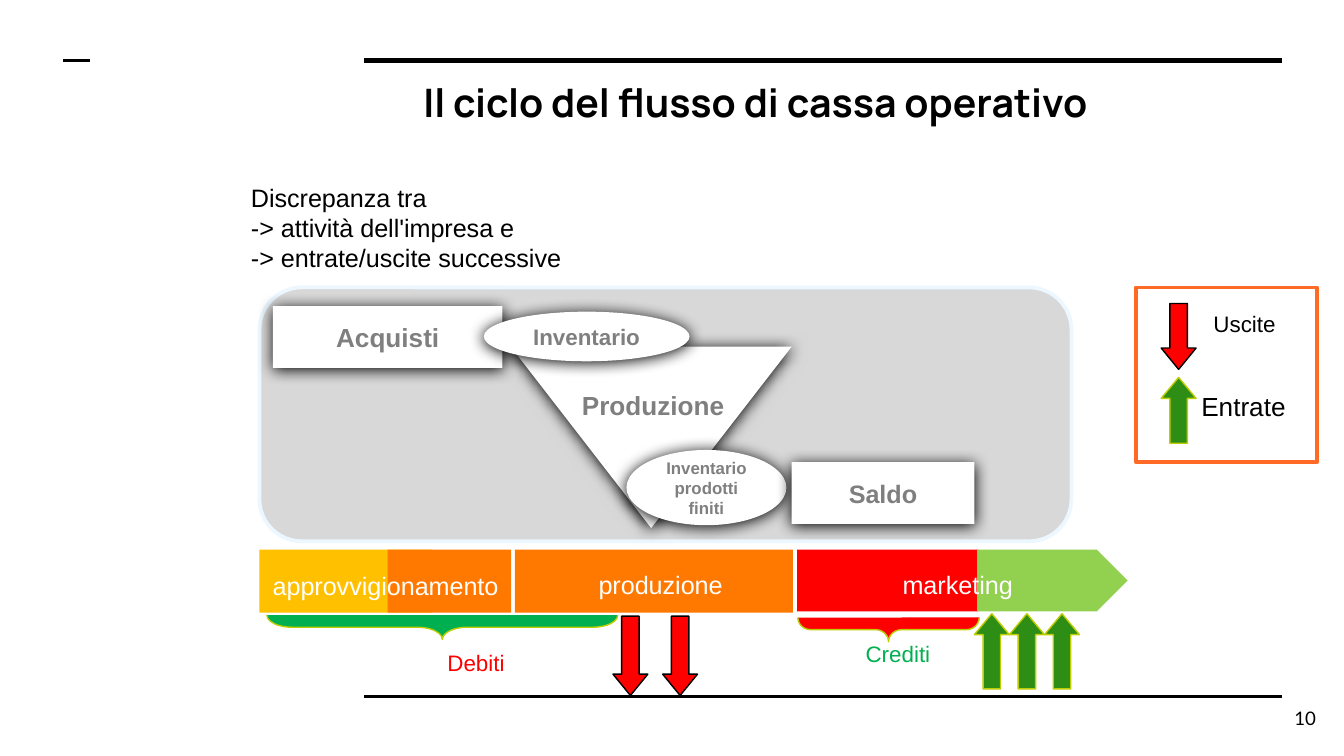
from lxml import etree
from pptx import Presentation
from pptx.dml.color import RGBColor
from pptx.enum.shapes import MSO_CONNECTOR, MSO_SHAPE as SHAPE
from pptx.enum.text import MSO_ANCHOR as ANCHOR, PP_ALIGN as ALIGN
from pptx.oxml import parse_xml
from pptx.oxml.ns import qn
from pptx.util import Pt

COLORS = {
    "black": "000000", "white": "FFFFFF", "grey": "7F7F7F", "panel": "D8D8D8",
    "pale_blue": "ECF7FF", "amber": "FFC000", "orange": "FF7900", "red": "FF0000",
    "light_green": "92D050", "green": "00B050", "dark_green": "2E8D15",
    "lime": "BECD00", "frame": "FF6B26",
}
SHADOW = (
    '<a:effectLst xmlns:a="http://schemas.openxmlformats.org/drawingml/2006/main">'
    '<a:outerShdw blurRad="107950" dist="12700" dir="5400000" algn="ctr" rotWithShape="0">'
    '<a:srgbClr val="000000"/></a:outerShdw></a:effectLst>'
)


def rgb(name):
    return RGBColor.from_string(COLORS[name])


def write(shape, text, size=13.5, color="black", font="Arial", bold=False,
          align=ALIGN.LEFT, anchor=ANCHOR.TOP, inset=3.6, spacing=None):
    frame = shape.text_frame
    frame.word_wrap = True
    frame.vertical_anchor = anchor
    frame.margin_left = frame.margin_right = Pt(7.2)
    frame.margin_top = frame.margin_bottom = Pt(inset)
    frame.text = text
    for paragraph in frame.paragraphs:
        paragraph.alignment = align
        paragraph.line_spacing = spacing
        paragraph.font.size = Pt(size)
        paragraph.font.name = font
        paragraph.font.bold = bold
        paragraph.font.color.rgb = rgb(color)


def add_label(slide, x, y, w, h, text, **style):
    label = slide.shapes.add_textbox(Pt(x), Pt(y), Pt(w), Pt(h))
    write(label, text, **style)


def add_block(slide, kind, x, y, w, h, fill=None, line=None, width=0.75, adjust=()):
    block = slide.shapes.add_shape(kind, Pt(x), Pt(y), Pt(w), Pt(h))
    block.shadow.inherit = False
    if fill:
        block.fill.solid()
        block.fill.fore_color.rgb = rgb(fill)
    else:
        block.fill.background()
    if line:
        block.line.color.rgb = rgb(line)
        block.line.width = Pt(width)
    else:
        block.line.fill.background()
    for index, value in enumerate(adjust):
        block.adjustments[index] = value
    return block


def add_outflow(slide, x, y, h):
    add_block(slide, SHAPE.DOWN_ARROW, x, y, 18.7, h, "red", "black", adjust=(0.5, 0.61))


def add_inflow(slide, x, y, h):
    add_block(slide, SHAPE.UP_ARROW, x, y, 18.7, h, "dark_green", "lime", adjust=(0.5, 0.6))


def add_brace(slide, x, y, w, h, fill, curve):
    brace = add_block(slide, SHAPE.LEFT_BRACE, x + (w - h) / 2, y + (h - w) / 2, h, w,
                      fill, "lime", adjust=(curve, 0.5))
    brace.rotation = 270


def add_rule(slide, x1, x2, y, width):
    rule = slide.shapes.add_connector(MSO_CONNECTOR.STRAIGHT, Pt(x1), Pt(y), Pt(x2), Pt(y))
    rule.line.color.rgb = rgb("black")
    rule.line.width = Pt(width)
    etree.SubElement(rule.element.spPr, qn("a:effectLst"))


def add_heading(slide, x, y, w, h):
    title = slide.shapes.title
    title.left, title.top, title.width, title.height = Pt(x), Pt(y), Pt(w), Pt(h)
    write(title, "Il ciclo del flusso di cassa operativo", size=21, font="Manrope",
          bold=True, inset=7.2)


def add_cycle(slide, x, y, w, h):
    add_block(slide, SHAPE.ROUNDED_RECTANGLE, x, y, w, h, "panel", "pale_blue", 2)
    stages = [
        (SHAPE.RECTANGLE, 7.2, 10, 123, 33.1, "Acquisti", 14),
        (SHAPE.FLOWCHART_MERGE, 134.6, 31.7, 150.5, 97.2, "", 14),
        (SHAPE.OVAL, 120.2, 13, 110.2, 26.6, "Inventario", 12),
        (SHAPE.OVAL, 196.6, 87.1, 85.7, 40.3, "Inventario prodotti finiti", 9),
        (SHAPE.RECTANGLE, 285.1, 93.6, 97.9, 33.1, "Saldo", 13.5),
    ]
    for kind, dx, dy, width, height, text, size in stages:
        stage = add_block(slide, kind, x + dx, y + dy, width, height, "white")
        properties = stage.element.spPr
        properties.replace(properties.find(qn("a:effectLst")), parse_xml(SHADOW))
        if text:
            write(stage, text, size=size, color="grey", bold=True,
                  align=ALIGN.CENTER, anchor=ANCHOR.MIDDLE)
    add_label(slide, x + 165.6, y + 51.1, 97.2, 24.5, "Produzione",
              size=14, color="grey", bold=True)


def add_timeline(slide, x, y, h):
    phases = [
        (SHAPE.RECTANGLE, 0, 92.2, h, "amber"),
        (SHAPE.RECTANGLE, 68.7, 66.2, h, "orange"),
        (SHAPE.RECTANGLE, 136.8, 149, h, "orange"),
        (SHAPE.RECTANGLE, 288, 97.2, h - 0.7, "red"),
        (SHAPE.PENTAGON, 384.5, 80.6, h - 0.7, "light_green"),
    ]
    for kind, dx, width, height, fill in phases:
        add_block(slide, kind, x + dx, y, width, height, fill)
    names = [
        (0, 7.2, 136.8, "approvvigionamento", ALIGN.LEFT),
        (148.3, 6.5, 133.2, "produzione", ALIGN.CENTER),
        (301, 6.5, 146.2, "marketing", ALIGN.CENTER),
    ]
    for dx, dy, width, text, align in names:
        add_label(slide, x + dx, y + dy, width, 23.8, text, color="white",
                  align=align, anchor=ANCHOR.MIDDLE)


def add_cash_flows(slide, x, y):
    add_brace(slide, x + 4, y + 1.2, 188, 13, "green", 1.03)
    add_brace(slide, x + 288.4, y + 2.5, 97.2, 13, "red", 0.53)
    for dx, dy, width, text, color in [(48.3, 15.9, 135.4, "Debiti", "red"),
                                       (260.7, 10.8, 162.7, "Crediti", "green")]:
        add_label(slide, x + dx, y + dy, width, 21.6, text, size=12, color=color,
                  align=ALIGN.CENTER, anchor=ANCHOR.MIDDLE)
    for index in range(2):
        add_outflow(slide, x + 189.4 + 26.6 * index, y + 1.8, 42.5)
    for index in range(3):
        add_inflow(slide, x + 383 + 18.8 * index, y + 0.5, 40.3)


def add_legend(slide, x, y, w, h):
    add_outflow(slide, x + 13.7, y + 8.6, 35.3)
    add_inflow(slide, x + 13.7, y + 48.2, 35.3)
    add_label(slide, x + 34.6, y + 8.6, 62.6, 21.6, "Uscite", size=12)
    add_label(slide, x + 28.1, y + 51.8, 62.6, 24.5, "Entrate", size=14)
    add_block(slide, SHAPE.RECTANGLE, x, y, w, h, line="frame", width=2)


def main():
    deck = Presentation()
    deck.slide_width, deck.slide_height = Pt(720), Pt(405)
    slide = deck.slides.add_slide(deck.slide_layouts[5])
    add_heading(slide, 219.6, 34.6, 378, 38.2)
    add_label(slide, 127.4, 94.3, 489.6, 240.5,
              "Discrepanza tra\n-> attività dell'impresa e\n-> entrate/uscite successive",
              spacing=Pt(16))
    add_cycle(slide, 139, 154, 435, 136)
    add_timeline(slide, 139, 294.5, 33.8)
    add_cash_flows(slide, 139, 328.3)
    add_rule(slide, 195, 687, 32.5, 3)
    add_rule(slide, 195, 687, 373, 1.5)
    add_rule(slide, 33.8, 48.2, 32.5, 1.5)
    add_legend(slide, 608.4, 154, 97.2, 93.6)
    add_label(slide, 668.9, 369.4, 43.2, 31, "10", size=10, font="Lato",
              align=ALIGN.RIGHT, anchor=ANCHOR.MIDDLE, inset=7.2)
    deck.save("out.pptx")


if __name__ == "__main__":
    main()
